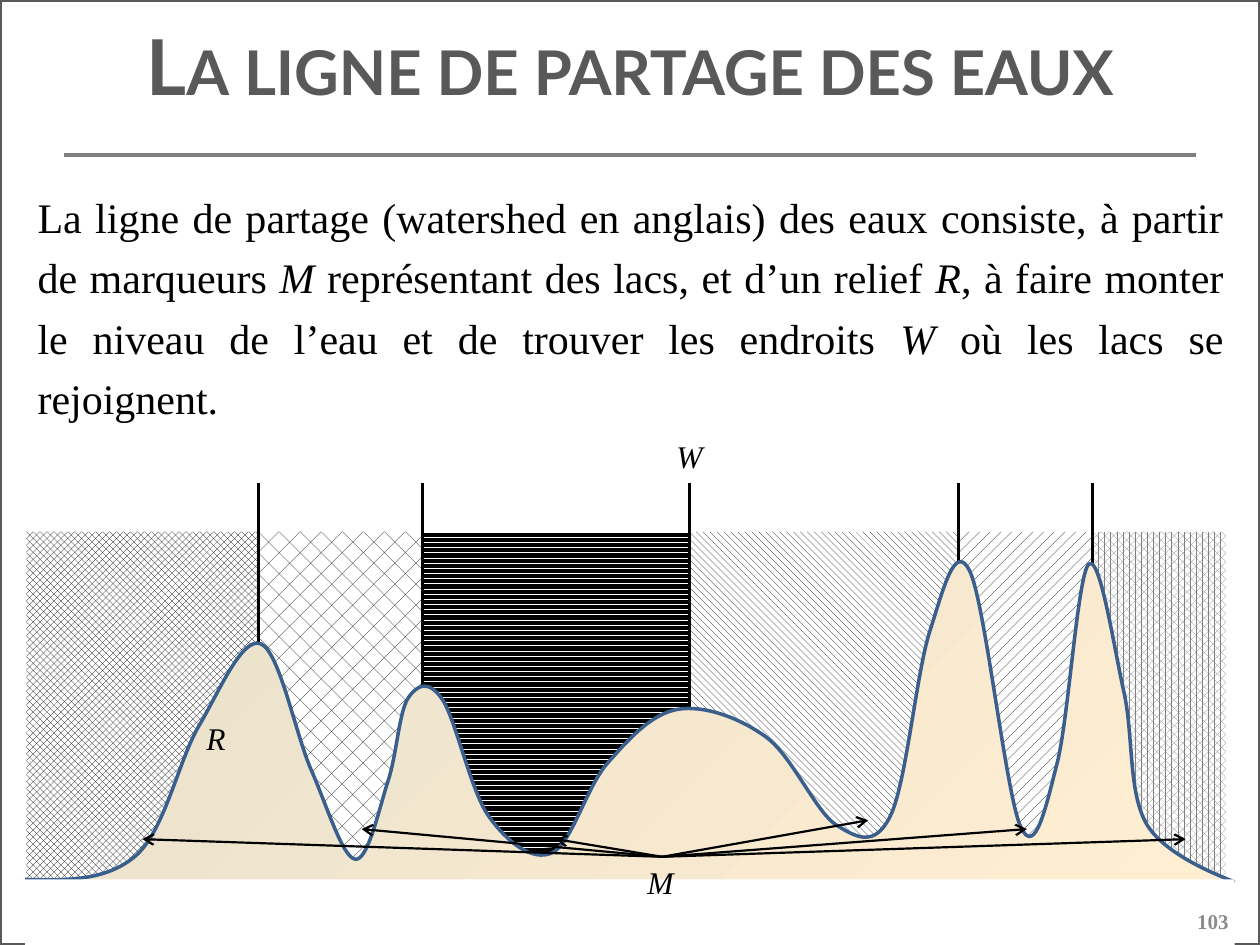
"""Build the slide that explains the watershed line."""
from dataclasses import dataclass
from itertools import pairwise

from lxml import etree
from pptx import Presentation
from pptx import util as u
from pptx.dml.color import RGBColor
from pptx.enum import dml, shapes, text
from pptx.oxml.ns import qn


@dataclass(frozen=True)
class Theme:
    """Colours, fonts and type sizes of the slide."""
    heading_font: str = "Lato"
    body_font: str = "Times New Roman"
    heading: str = "595959"
    rule: str = "808080"
    number: str = "8C8C8C"
    ink: str = "000000"
    paper: str = "FFFFFF"
    ridge: str = "3A5F8C"
    earth: tuple = ("E8E0CC", "FFEED2")
    title_size: int = 44
    body_size: int = 24
    label_size: int = 18
    number_size: int = 12


THEME = Theme()
WIDTH, HEIGHT = 10, 7.5
LEFT, GROUND = 0.2, 6.98
BASIN_TOP, BASIN_HEIGHT, WATERSHED_TOP = 4.22, 2.92, 3.83
UNITS_PER_INCH = 1000
EDGES = (0.21, 2.05, 3.35, 5.47, 7.61, 8.67, 9.73)
PATTERNS = (
    (dml.MSO_PATTERN.SOLID_DIAMOND, THEME.ink),
    (dml.MSO_PATTERN.DIAGONAL_BRICK, THEME.ink),
    (dml.MSO_PATTERN.DARK_HORIZONTAL, THEME.ink),
    (dml.MSO_PATTERN.WIDE_DOWNWARD_DIAGONAL, THEME.ink),
    (dml.MSO_PATTERN.DASHED_UPWARD_DIAGONAL, THEME.ink),
    (dml.MSO_PATTERN.PERCENT_70, THEME.rule),
)
RELIEF = (
    (0.2, 6.98), (1.08, 6.79), (1.58, 5.76), (2.07, 5.11), (2.47, 6.11), (2.82, 6.82),
    (3.08, 6.2), (3.24, 5.54), (3.51, 5.55), (3.88, 6.48), (4.38, 6.77), (4.82, 6.06),
    (5.38, 5.63), (6.08, 5.85), (6.64, 6.55), (7.07, 6.47), (7.38, 5.01), (7.7, 4.54),
    (8.1, 6.56), (8.39, 6.06), (8.64, 4.48), (8.92, 5.49), (9.1, 6.54), (9.8, 7),
)
RELIEF_GUIDES = ((-0.84, 6.73), (9.7, 6.78))
LAKES = ((1.13, 6.66), (2.87, 6.58), (4.41, 6.66), (6.89, 6.51), (8.15, 6.58), (9.41, 6.66))
DEFINITION = (
    ("La ligne de partage (watershed en anglais) des eaux consiste, à partir de marqueurs ", False),
    ("M", True),
    (" représentant des lacs, et d’un relief ", False),
    ("R", True),
    (", à faire monter le niveau de l’eau et de trouver les endroits ", False),
    ("W", True),
    (" où les lacs se rejoignent.", False),
)


def inches(*lengths):
    """Convert lengths in inches to slide units."""
    return [u.Inches(length) for length in lengths]


def style_font(font, name, size, color, bold=False, italic=None):
    """Set the face, size, colour and weight of a font."""
    font.name, font.size, font.bold, font.italic = name, u.Pt(size), bold, italic
    font.color.rgb = RGBColor.from_string(color)


def style_line(line, color, width):
    """Set the colour and width of a line."""
    line.color.rgb = RGBColor.from_string(color)
    line.width = u.Pt(width)


def add_box(slide, left, top, width, height):
    """Add a rectangle without shadow, fill or line."""
    shape = slide.shapes.add_shape(shapes.MSO_SHAPE.RECTANGLE, *inches(left, top, width, height))
    shape.shadow.inherit = False
    shape.fill.background()
    shape.line.fill.background()
    return shape


def add_line(slide, start, end, color, width, arrow=False):
    """Add a straight line, with an open arrowhead at its end on request."""
    line = slide.shapes.add_connector(shapes.MSO_CONNECTOR.STRAIGHT, *inches(*start, *end))
    style_line(line.line, color, width)
    properties = line._element.spPr
    if arrow:
        etree.SubElement(properties.find(qn("a:ln")), qn("a:tailEnd"), type="arrow")
    etree.SubElement(properties, qn("a:effectLst"))
    return line


def add_text(slide, left, top, width, height, runs, size, wrap=True, **style):
    """Add a text box of one paragraph whose runs are (words, italic) pairs."""
    box = slide.shapes.add_textbox(*inches(left, top, width, height))
    box.text_frame.word_wrap = wrap
    paragraph = box.text_frame.paragraphs[0]
    style_font(paragraph.font, THEME.body_font, size, **style)
    for words, italic in runs:
        run = paragraph.add_run()
        run.text, run.font.italic = words, italic
    return box


def add_label(slide, letter, left, top, width):
    """Add an italic letter that names a part of the diagram."""
    return add_text(slide, left, top, width, 0.4, [(letter, True)], THEME.label_size,
                    wrap=False, color=THEME.ink)


def add_title(slide, words):
    """Fill the title placeholder with small capitals."""
    title = slide.shapes.title
    title.left, title.top, title.width, title.height = inches(0.5, 0.13, 9, 1.02)
    title.text_frame.vertical_anchor = text.MSO_ANCHOR.MIDDLE
    title.text_frame.text = words
    paragraph = title.text_frame.paragraphs[0]
    paragraph.alignment = text.PP_ALIGN.CENTER
    paragraph.line_spacing = u.Pt(35)
    style_font(paragraph.font, THEME.heading_font, THEME.title_size, THEME.heading, bold=True)
    paragraph.runs[0]._r.get_or_add_rPr().set("cap", "small")


def smooth_points(knots, guides):
    """Return the Bézier points of a smooth curve through the knots."""
    points = [guides[0], *knots, guides[1]]
    handles = [((after[0] - before[0]) / 6, (after[1] - before[1]) / 6)
               for before, after in zip(points, points[2:])]
    curve = []
    for ((x1, y1), (dx1, dy1)), ((x2, y2), (dx2, dy2)) in pairwise(zip(knots, handles)):
        curve += [(x1 + dx1, y1 + dy1), (x2 - dx2, y2 - dy2), (x2, y2)]
    return curve


def add_relief(slide):
    """Add the relief as a smooth outline with a soft gradient."""
    start, *points = [(round(x * UNITS_PER_INCH), round(y * UNITS_PER_INCH))
                      for x, y in (RELIEF[0], *smooth_points(RELIEF, RELIEF_GUIDES))]
    builder = slide.shapes.build_freeform(*start, scale=u.Inches(1) / UNITS_PER_INCH)
    builder.add_line_segments(points, close=False)
    relief = builder.convert_to_shape()
    segments = list(relief._element.iter(qn("a:lnTo")))
    for first in range(0, len(segments), 3):
        curve = etree.Element(qn("a:cubicBezTo"))
        segments[first].addprevious(curve)
        for segment in segments[first:first + 3]:
            curve.append(segment[0])
            segment.getparent().remove(segment)
    relief.shadow.inherit = False
    relief.fill.gradient()
    relief.fill.gradient_angle = 315
    for stop, color in zip(relief.fill.gradient_stops, THEME.earth):
        stop.color.rgb = RGBColor.from_string(color)
    style_line(relief.line, THEME.ridge, 2)


def add_basins(slide):
    """Add the patterned basins and the watershed lines between them."""
    for (left, right), (pattern, color) in zip(pairwise(EDGES), PATTERNS):
        basin = add_box(slide, left, BASIN_TOP, right - left, BASIN_HEIGHT)
        basin.fill.patterned()
        basin.fill.pattern = pattern
        basin.fill.fore_color.rgb = RGBColor.from_string(color)
        basin.fill.back_color.rgb = RGBColor.from_string(THEME.paper)
    for edge in EDGES[1:-1]:
        add_line(slide, (edge, WATERSHED_TOP), (edge, 5.7), THEME.ink, 1.75)


def add_ground(slide):
    """Add the plain strip below the relief."""
    ground = add_box(slide, LEFT, GROUND, WIDTH - 2 * LEFT, HEIGHT - GROUND)
    ground.fill.solid()
    ground.fill.fore_color.rgb = RGBColor.from_string(THEME.paper)


def add_markers(slide):
    """Add the marker label and its arrows to the lakes."""
    label = add_label(slide, "M", 5.04, 6.8, 0.43)
    for lake in LAKES:
        arrow = add_line(slide, (5.26, 6.8), lake, THEME.ink, 1.25, arrow=True)
        arrow.begin_connect(label, 0)


def main():
    """Build and save the slide."""
    presentation = Presentation()
    presentation.slide_width, presentation.slide_height = inches(WIDTH, HEIGHT)
    slide = presentation.slides.add_slide(presentation.slide_layouts[5])
    add_line(slide, (0.51, 1.23), (9.49, 1.23), THEME.rule, 2)
    style_line(add_box(slide, 0, 0, WIDTH, HEIGHT).line, THEME.heading, 2)
    add_basins(slide)
    add_relief(slide)
    add_ground(slide)
    add_title(slide, "La ligne de partage des eaux")
    number = add_text(slide, 7.52, 7.14, 2.33, 0.32, [("103", None)], THEME.number_size,
                      color=THEME.number, bold=True)
    number.text_frame.vertical_anchor = text.MSO_ANCHOR.BOTTOM
    number.text_frame.paragraphs[0].alignment = text.PP_ALIGN.RIGHT
    body = add_text(slide, LEFT, 1.39, 9.61, 5.67, DEFINITION, THEME.body_size, color=THEME.ink)
    paragraph = body.text_frame.paragraphs[0]
    paragraph.alignment = text.PP_ALIGN.JUSTIFY
    paragraph.line_spacing, paragraph.space_before = 1.2, u.Pt(4.8)
    add_label(slide, "R", 1.54, 5.66, 0.35)
    add_markers(slide)
    add_label(slide, "W", 5.27, 3.42, 0.42)
    presentation.save("out.pptx")


if __name__ == "__main__":
    main()
